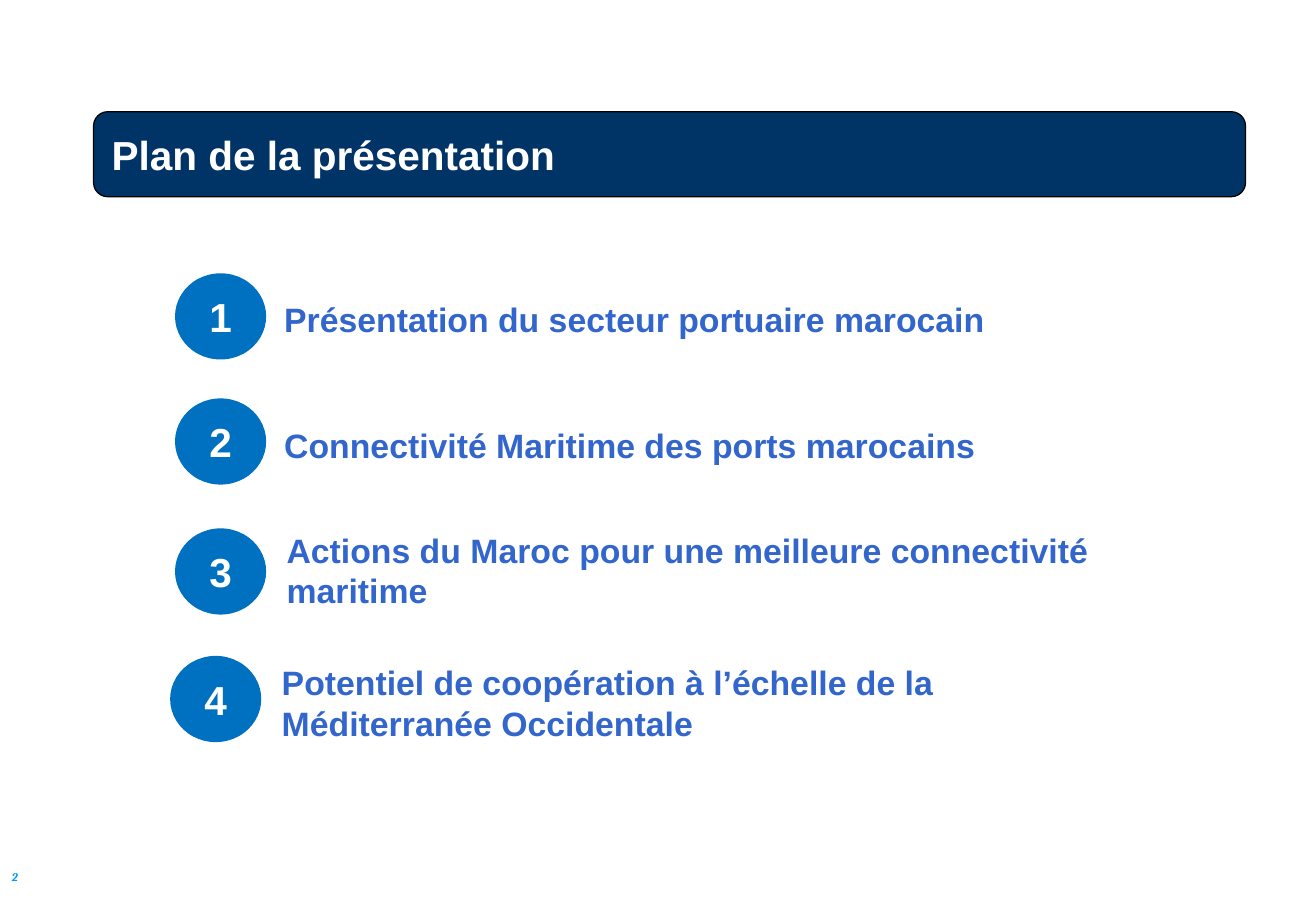
"""Build the agenda slide: a title banner and four numbered sections."""
import pptx
import pptx.util
from pptx.dml.color import RGBColor
from pptx.enum.shapes import MSO_SHAPE
from pptx.enum.text import MSO_ANCHOR, PP_ALIGN
from pptx.util import Inches

COLORS = {
    "banner": "003366",
    "outline": "000000",
    "badge": "0070C0",
    "label": "3366CC",
    "number": "0099FF",
    "white": "FFFFFF",
}

SECTIONS = [
    (1.44, 2.25, 2.24, 2.41, 0.44, "Présentation du secteur portuaire marocain"),
    (1.44, 3.28, 2.24, 3.45, 0.44, "Connectivité Maritime des ports marocains"),
    (1.44, 4.35, 2.26, 4.31, 0.77,
     "Actions du Maroc pour une meilleure connectivité maritime"),
    (1.4, 5.4, 2.22, 5.4, 0.77,
     "Potentiel de coopération à l’échelle de la Méditerranée Occidentale"),
]


def rgb(name):
    return RGBColor.from_string(COLORS[name])


def write(sp, text, size, color, font="Arial", italic=False,
          align=PP_ALIGN.LEFT, anchor=MSO_ANCHOR.TOP):
    tf = sp.text_frame
    tf.text = text
    tf.word_wrap = True
    tf.vertical_anchor = anchor
    p = tf.paragraphs[0]
    p.alignment = align
    r = p.runs[0]
    r.font.name = font
    r.font.size = pptx.util.Pt(size)
    r.font.bold = True
    r.font.italic = italic
    r.font.color.rgb = rgb(color)


def add_text(s, x, y, w, h, text, size, color, **style):
    sp = s.shapes.add_textbox(Inches(x), Inches(y), Inches(w), Inches(h))
    write(sp, text, size, color, **style)


def add_filled(s, kind, x, y, w, h, fill):
    sp = s.shapes.add_shape(kind, Inches(x), Inches(y), Inches(w), Inches(h))
    sp.shadow.inherit = False
    sp.fill.solid()
    sp.fill.fore_color.rgb = rgb(fill)
    sp.line.fill.background()
    return sp


def add_banner(s, title):
    sp = add_filled(s, MSO_SHAPE.ROUNDED_RECTANGLE, 0.77, 0.92, 9.48, 0.7, "banner")
    sp.line.color.rgb = rgb("outline")
    sp.line.width = pptx.util.Pt(0.75)
    add_text(s, 0.82, 1.02, 9.38, 0.44, title, 24, "white")


def add_badge(s, x, y, number):
    sp = add_filled(s, MSO_SHAPE.OVAL, x, y, 0.75, 0.71, "badge")
    write(sp, str(number), 24, "white",
          align=PP_ALIGN.CENTER, anchor=MSO_ANCHOR.MIDDLE)


def main():
    prs = pptx.Presentation()
    prs.slide_width = Inches(10.83)
    prs.slide_height = Inches(7.5)
    s = prs.slides.add_slide(prs.slide_layouts[6])
    add_banner(s, "Plan de la présentation")
    for number, (badge_x, badge_y, x, y, h, label) in enumerate(SECTIONS, 1):
        add_badge(s, badge_x, badge_y, number)
        add_text(s, x, y, 7.02, h, label, 20, "label")
    add_text(s, 0, 7.11, 0.59, 0.22, "2", 7, "number", font="Cambria", italic=True)
    prs.save("out.pptx")


if __name__ == "__main__":
    main()
